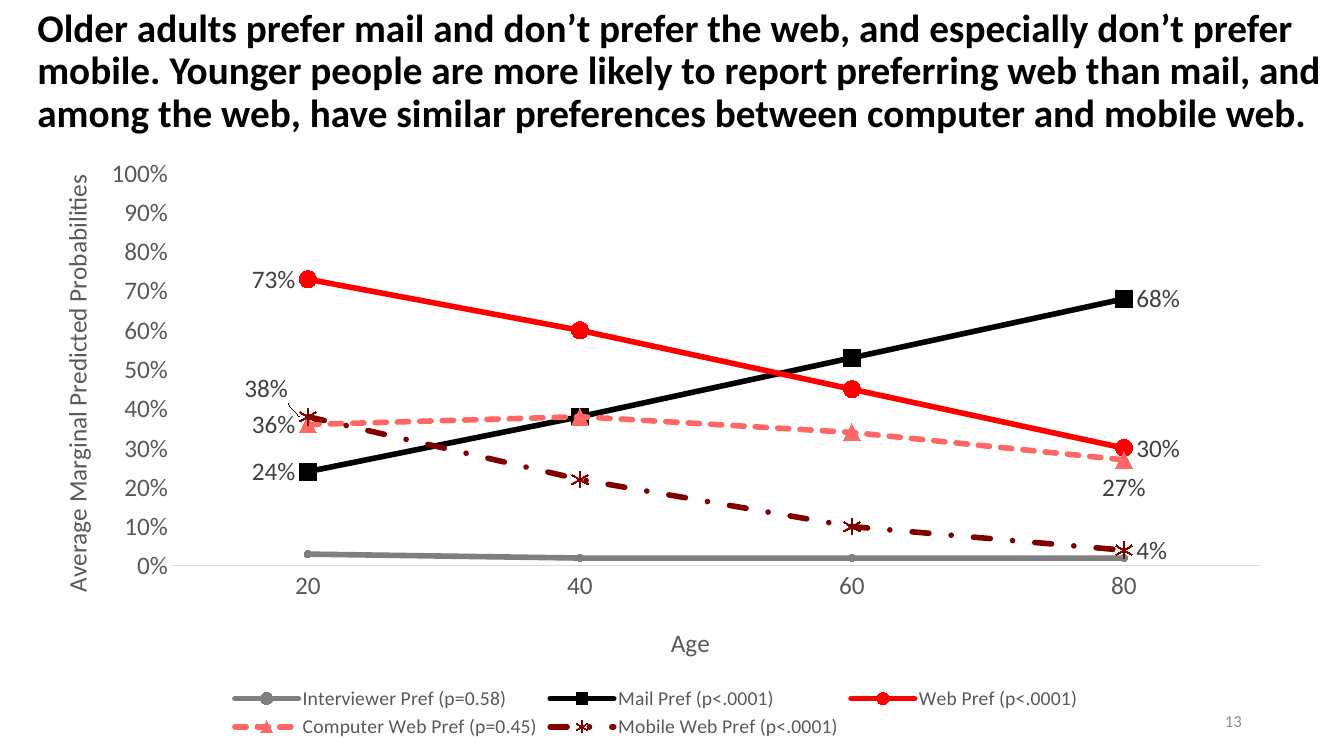
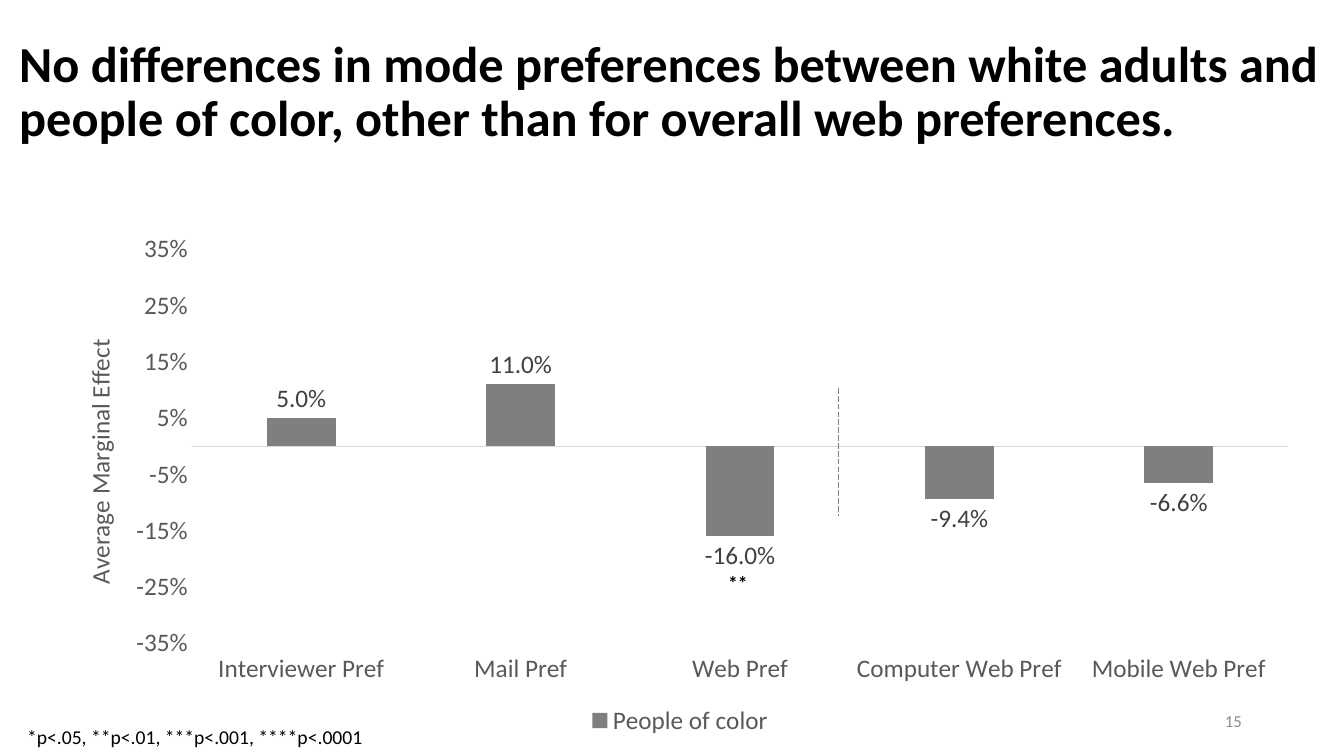
"""Build two chart slides on survey mode preferences."""
from dataclasses import dataclass
from typing import Any, NamedTuple, Optional

from lxml import etree
from pptx import Presentation
from pptx.chart.data import CategoryChartData
from pptx.dml.color import RGBColor
from pptx.enum.chart import (XL_CHART_TYPE, XL_LABEL_POSITION, XL_LEGEND_POSITION,
                             XL_MARKER_STYLE, XL_TICK_LABEL_POSITION, XL_TICK_MARK)
from pptx.enum.dml import MSO_LINE
from pptx.enum.shapes import MSO_CONNECTOR
from pptx.enum.text import MSO_ANCHOR, MSO_AUTO_SIZE, PP_ALIGN
from pptx.oxml.ns import qn
from pptx.util import Emu, Inches, Pt

LEFT, RIGHT = XL_LABEL_POSITION.LEFT, XL_LABEL_POSITION.RIGHT
BELOW, OUTSIDE = XL_LABEL_POSITION.BELOW, XL_LABEL_POSITION.OUTSIDE_END
CIRCLE, SQUARE = XL_MARKER_STYLE.CIRCLE, XL_MARKER_STYLE.SQUARE
TRIANGLE, STAR = XL_MARKER_STYLE.TRIANGLE, XL_MARKER_STYLE.STAR
SHORT_DASH, DASH_DOT, LONG_DASH = MSO_LINE.SQUARE_DOT, MSO_LINE.DASH_DOT, MSO_LINE.LONG_DASH
ALIGN_LEFT, ALIGN_CENTER, ALIGN_RIGHT = PP_ALIGN.LEFT, PP_ALIGN.CENTER, PP_ALIGN.RIGHT
TOP, MIDDLE = MSO_ANCHOR.TOP, MSO_ANCHOR.MIDDLE
TITLE_ONLY = 5
SLIDE_WIDTH, SLIDE_HEIGHT = Inches(13.33), Inches(7.5)


@dataclass(frozen=True)
class Theme:
    """Colours, font and type sizes shared by the slides."""
    font: str = "Calibri"
    black: str = "000000"
    gray: str = "7F7F7F"
    red: str = "FF0000"
    pink: str = "FF6666"
    maroon: str = "800000"
    axis_text: str = "595959"
    label_text: str = "404040"
    number_text: str = "8C8C8C"
    axis_line: str = "D9D9D9"
    chart_size: int = 18
    note_size: int = 14
    number_size: int = 12
    series_width: int = 4
    hairline: float = 0.75


THEME = Theme()


class Box(NamedTuple):
    """A rectangle in percent of the slide or of the chart."""
    left: float
    top: float
    width: float
    height: float


class Point(NamedTuple):
    """A place or offset in percent of the chart."""
    left: float
    top: float


class AxisTitle(NamedTuple):
    """An axis title and its place in the chart."""
    text: str
    place: Point


class Scale(NamedTuple):
    """The range of a value axis."""
    minimum: float
    maximum: float


@dataclass(frozen=True)
class LineSeries:
    """One line of the age chart."""
    name: str
    values: tuple[float, ...]
    color: str
    marker: Any
    marker_size: int = 12
    dash: Any = None
    end_positions: tuple[Any, ...] = (LEFT, RIGHT)
    first_offset: Optional[Point] = None


AGES = ("20", "40", "60", "80")
AGE_LINES = (
    LineSeries("Interviewer Pref (p=0.58)", (0.03, 0.02, 0.02, 0.02), THEME.gray, CIRCLE, 5,
               end_positions=()),
    LineSeries("Mail Pref (p<.0001)", (0.24, 0.38, 0.53, 0.68), THEME.black, SQUARE),
    LineSeries("Web Pref (p<.0001)", (0.73, 0.6, 0.45, 0.3), THEME.red, CIRCLE),
    LineSeries("Computer Web Pref (p=0.45)", (0.36, 0.38, 0.34, 0.27), THEME.pink, TRIANGLE,
               dash=SHORT_DASH, end_positions=(LEFT, BELOW)),
    LineSeries("Mobile Web Pref (p<.0001)", (0.38, 0.22, 0.1, 0.04), THEME.maroon, STAR,
               dash=DASH_DOT, first_offset=Point(-0.6, -4.7)),
)
MODE_EFFECTS = {"Interviewer Pref": 0.05, "Mail Pref": 0.11, "Web Pref": -0.16,
                "Computer Web Pref": -0.094, "Mobile Web Pref": -0.066}


def across(percent: float) -> Emu:
    """Turn a share of the slide's width into a length."""
    return Emu(round(SLIDE_WIDTH * percent / 100))


def down(percent: float) -> Emu:
    """Turn a share of the slide's height into a length."""
    return Emu(round(SLIDE_HEIGHT * percent / 100))


def bounds(box: Box) -> tuple[Emu, Emu, Emu, Emu]:
    """Turn a box into left, top, width and height on the slide."""
    return across(box.left), down(box.top), across(box.width), down(box.height)


def style_font(font: Any, size: float, color: str, bold: bool = False) -> None:
    """Apply the theme font with a size, colour and weight."""
    font.name, font.size, font.bold = THEME.font, Pt(size), bold
    font.color.rgb = RGBColor.from_string(color)


def style_line(line: Any, color: str, width: float, dash: Any = None) -> None:
    """Colour a line and set its width and dash."""
    line.color.rgb = RGBColor.from_string(color)
    line.width = Pt(width)
    if dash is not None:
        line.dash_style = dash


def fill_solid(fill: Any, color: str) -> None:
    """Fill with one colour."""
    fill.solid()
    fill.fore_color.rgb = RGBColor.from_string(color)


def write(shape: Any, text: str, size: float, color: str = THEME.black, bold: bool = False,
          alignment: Any = ALIGN_LEFT, anchor: Any = TOP) -> Any:
    """Write one formatted paragraph into a shape and return it."""
    frame = shape.text_frame
    frame.text = text
    frame.word_wrap, frame.auto_size, frame.vertical_anchor = True, MSO_AUTO_SIZE.NONE, anchor
    paragraph = frame.paragraphs[0]
    paragraph.alignment = alignment
    for run in paragraph.runs:
        style_font(run.font, size, color, bold)
    return paragraph


def add_text(slide: Any, box: Box, text: str, size: float, **style: Any) -> None:
    """Add a text box."""
    write(slide.shapes.add_textbox(*bounds(box)), text, size, **style)


def add_titled_slide(presentation: Any, title: str, box: Box, size: float, number: str) -> Any:
    """Add a slide with its title and slide number."""
    slide = presentation.slides.add_slide(presentation.slide_layouts[TITLE_ONLY])
    shape = slide.shapes.title
    shape.left, shape.top, shape.width, shape.height = bounds(box)
    write(shape, title, size, bold=True, anchor=MIDDLE).line_spacing = 0.9
    add_text(slide, Box(70.65, 92.67, 22.5, 5.33), number, THEME.number_size,
             color=THEME.number_text, alignment=ALIGN_RIGHT, anchor=MIDDLE)
    return slide


def place_in_chart(element: Any, index: int, place: Any, **modes: str) -> None:
    """Give a chart element a manual layout as its child at the index."""
    for previous in element.findall(qn("c:layout")):
        element.remove(previous)
    layout = etree.Element(qn("c:layout"))
    manual = etree.SubElement(layout, qn("c:manualLayout"))
    for tag, value in modes.items():
        etree.SubElement(manual, qn(f"c:{tag}")).set("val", value)
    for tag, percent in zip("xywh", place):
        etree.SubElement(manual, qn(f"c:{tag}")).set("val", f"{percent / 100:.4f}")
    element.insert(index, layout)


def title_axis(axis: Any, title: AxisTitle) -> None:
    """Write and place the title of an axis."""
    frame = axis.axis_title.text_frame
    frame.text = title.text
    style_font(frame.paragraphs[0].runs[0].font, THEME.chart_size, THEME.axis_text)
    place_in_chart(axis.axis_title._element, 1, title.place, xMode="edge", yMode="edge")


def add_chart(slide: Any, kind: Any, box: Box, plot_box: Box, data: CategoryChartData,
              scale: Scale, value_title: AxisTitle, legend_size: int) -> Any:
    """Add a chart with the shared axes, legend and fonts."""
    chart = slide.shapes.add_chart(kind, *bounds(box), data).chart
    chart.has_title = False
    style_font(chart.font, THEME.chart_size, THEME.black)
    chart.has_legend = True
    chart.legend.position = XL_LEGEND_POSITION.BOTTOM
    chart.legend.include_in_layout = False
    style_font(chart.legend.font, legend_size, THEME.axis_text)
    for axis in (chart.category_axis, chart.value_axis):
        axis.has_major_gridlines = False
        axis.major_tick_mark = axis.minor_tick_mark = XL_TICK_MARK.NONE
        style_font(axis.tick_labels.font, THEME.chart_size, THEME.axis_text)
    style_line(chart.category_axis.format.line, THEME.axis_line, THEME.hairline)
    values = chart.value_axis
    values.format.line.fill.background()
    values.minimum_scale, values.maximum_scale = scale
    values.major_unit = 0.1
    values.tick_labels.number_format = "0%"
    values.tick_labels.number_format_is_linked = False
    title_axis(values, value_title)
    body = values.axis_title._element.xpath(".//a:bodyPr")[0]
    body.set("rot", "-5400000")
    body.set("vert", "horz")
    place_in_chart(chart._chartSpace.xpath("c:chart/c:plotArea")[0], 0, plot_box,
                   layoutTarget="inner", xMode="edge", yMode="edge")
    chart.plots[0].vary_by_categories = False
    return chart


def style_age_line(series: Any, line: LineSeries) -> None:
    """Format one line, its markers and its end labels."""
    series.smooth = False
    style_line(series.format.line, line.color, THEME.series_width, line.dash)
    series._element.xpath("c:spPr/a:ln")[0].set("cap", "rnd")
    marker = series.marker
    marker.style, marker.size = line.marker, line.marker_size
    style_line(marker.format.line, line.color, THEME.hairline)
    if line.marker == STAR:
        marker.format.fill.background()
    else:
        fill_solid(marker.format.fill, line.color)
    for index, position in zip((0, len(AGES) - 1), line.end_positions):
        label = series.points[index].data_label
        style_font(label.font, THEME.chart_size, THEME.label_text)
        label.position = position
    if line.first_offset:
        place_in_chart(series._element.xpath("c:dLbls/c:dLbl")[0], 1, line.first_offset)


def build_age_slide(presentation: Any) -> None:
    """Build the slide on preferences by age."""
    slide = add_titled_slide(
        presentation,
        "Older adults prefer mail and don’t prefer the web, and especially don’t prefer mobile. "
        "Younger people are more likely to report preferring web than mail, and among the web, "
        "have similar preferences between computer and mobile web.",
        Box(2.03, -0.13, 97.95, 19.33), 28, "13")
    data = CategoryChartData(number_format="0%")
    data.categories = AGES
    for line in AGE_LINES:
        data.add_series(line.name, line.values)
    chart = add_chart(slide, XL_CHART_TYPE.LINE_MARKERS, Box(2.03, 19.2, 93.6, 79.07),
                      Box(11.5, 4.7, 86.5, 65.7), data, Scale(0, 1),
                      AxisTitle("Average Marginal Predicted Probabilities", Point(2.2, 4.2)),
                      THEME.note_size)
    title_axis(chart.category_axis, AxisTitle("Age", Point(50.8, 79.5)))
    for series, line in zip(chart.plots[0].series, AGE_LINES):
        style_age_line(series, line)


def build_color_slide(presentation: Any) -> None:
    """Build the slide on preferences of people of color."""
    slide = add_titled_slide(
        presentation,
        "No differences in mode preferences between white adults and people of color, "
        "other than for overall web preferences.",
        Box(0.68, 0, 99.32, 24.67), 36, "15")
    data = CategoryChartData(number_format="0.0%")
    data.categories = tuple(MODE_EFFECTS)
    data.add_series("People of color", tuple(MODE_EFFECTS.values()))
    chart = add_chart(slide, XL_CHART_TYPE.COLUMN_CLUSTERED, Box(3.53, 29.6, 94.13, 68.4),
                      Box(11.4, 4.9, 86.7, 76.2), data, Scale(-0.35, 0.35),
                      AxisTitle("Average Marginal Effect", Point(2.4, 21.5)), THEME.chart_size)
    chart.category_axis.tick_label_position = XL_TICK_LABEL_POSITION.LOW
    plot = chart.plots[0]
    plot.gap_width, plot.overlap = 219, -27
    series = plot.series[0]
    series.invert_if_negative = False
    fill_solid(series.format.fill, THEME.gray)
    labels = series.data_labels
    labels.show_value, labels.position = True, OUTSIDE
    labels.number_format, labels.number_format_is_linked = "0.0%", False
    style_font(labels.font, THEME.chart_size, THEME.label_text)
    add_text(slide, Box(51.83, 74.8, 6.15, 3.73), "**", THEME.note_size, bold=True,
             alignment=ALIGN_CENTER)
    add_text(slide, Box(1.28, 95.2, 34.2, 4.53), "*p<.05, **p<.01, ***p<.001, ****p<.0001",
             THEME.note_size)
    divider = slide.shapes.add_connector(MSO_CONNECTOR.STRAIGHT, across(62.4), down(51.33),
                                         across(62.4), down(68.27))
    style_line(divider.line, THEME.gray, 0.5, LONG_DASH)
    etree.SubElement(divider._element.spPr, qn("a:effectLst"))


def main() -> None:
    """Build and save the presentation."""
    presentation = Presentation()
    presentation.slide_width, presentation.slide_height = SLIDE_WIDTH, SLIDE_HEIGHT
    build_age_slide(presentation)
    build_color_slide(presentation)
    presentation.save("out.pptx")


if __name__ == "__main__":
    main()
